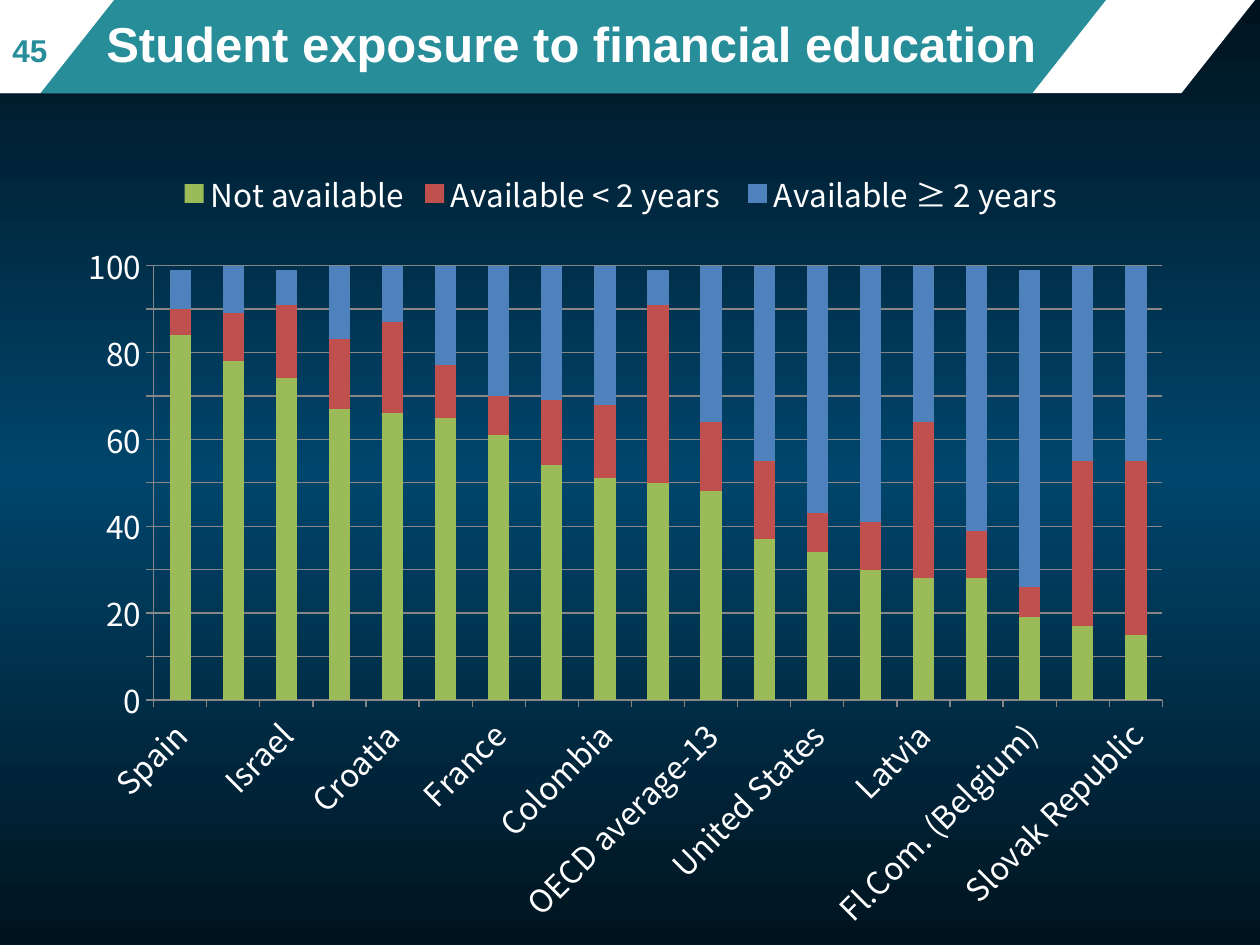
from copy import deepcopy

from lxml import etree
from pptx import Presentation
from pptx import util as u
from pptx.chart.data import CategoryChartData
from pptx.dml.color import RGBColor
from pptx.enum import chart as charts, shapes, text
from pptx.oxml.ns import qn

PX = 914400 / 126
COLORS = {
    "white": "FFFFFF", "teal": "278D99", "night": "00131E", "ocean": "00456C",
    "grid": "868686", "none": "9BBB59", "short": "C0504D", "long": "4F81BD",
}
EXPOSURE = [
    ("Spain", 84, 6, 9), ("Estonia", 78, 11, 11), ("Israel", 74, 17, 8),
    ("Slovenia", 67, 16, 17), ("Croatia", 66, 21, 13), ("Italy", 65, 12, 23),
    ("France", 61, 9, 30), ("Poland", 54, 15, 31), ("Colombia", 51, 17, 32),
    ("Shanghai-China", 50, 41, 8), ("OECD average-13", 48, 16, 36),
    ("Russian Federation", 37, 18, 45), ("United States", 34, 9, 57),
    ("New Zealand", 30, 11, 59), ("Latvia", 28, 36, 36),
    ("Australia", 28, 11, 61), ("Fl.Com. (Belgium)", 19, 7, 73),
    ("Czech Republic", 17, 38, 45), ("Slovak Republic", 15, 40, 45),
]
AVAILABILITY = [("Not available", "none"), ("Available < 2 years ", "short"),
                ("Available ≥ 2 years ", "long")]


def box(*lengths):
    return [u.Emu(round(length * PX)) for length in lengths]


def rgb(name):
    return RGBColor.from_string(COLORS[name])


def style_font(font, face, size, color, bold=False):
    font.name, font.size, font.bold = face, u.Pt(size), bold
    font.color.rgb = rgb(color)


def paint_background(slide):
    fill = slide.background.fill
    fill.gradient()
    fill.gradient_angle = 90
    stops = next(slide.element.iter(qn("a:gsLst")))
    stops.insert(1, deepcopy(stops[0]))
    for stop, position, color in zip(fill.gradient_stops, (0, 0.5, 1),
                                     ("night", "ocean", "night")):
        stop.position = position
        stop.color.rgb = rgb(color)


def add_band(slide, left, width, color):
    band = slide.shapes.add_shape(shapes.MSO_SHAPE.PARALLELOGRAM,
                                  *box(left, 0, width, 93))
    band.adjustments[0] = 0.79
    band.shadow.inherit = False
    band.fill.solid()
    band.fill.fore_color.rgb = rgb(color)
    band.line.fill.background()


def add_label(slide, place, words, size, color, anchor):
    frame = slide.shapes.add_textbox(*box(*place)).text_frame
    frame.word_wrap = True
    frame.vertical_anchor = anchor
    frame.text = words
    style_font(frame.paragraphs[0].runs[0].font, "Arial", size, color, True)


def style_line(line):
    line.color.rgb = rgb("grid")
    line.width = u.Pt(0.75)


def fix_plot_area(chart, **fractions):
    plot_area = chart.plots[0]._element.getparent()
    for old in plot_area.findall(qn("c:layout")):
        plot_area.remove(old)
    layout = etree.Element(qn("c:layout"))
    manual = etree.SubElement(layout, qn("c:manualLayout"))
    settings = {"layoutTarget": "inner", "xMode": "edge", "yMode": "edge", **fractions}
    for tag, value in settings.items():
        etree.SubElement(manual, qn(f"c:{tag}")).set("val", str(value))
    plot_area.insert(0, layout)


def style_axes(chart):
    countries, percent = chart.category_axis, chart.value_axis
    for axis in (countries, percent):
        axis.major_tick_mark = charts.XL_TICK_MARK.OUTSIDE
        axis.minor_tick_mark = charts.XL_TICK_MARK.NONE
        style_line(axis.format.line)
        style_font(axis.tick_labels.font, "Noto Sans CJK KR", 18, "white")
    countries._element.find(qn("c:txPr")).find(qn("a:bodyPr")).set("rot", "-2700000")
    percent.minimum_scale, percent.maximum_scale, percent.major_unit = 0, 100, 10
    percent.tick_labels.number_format = "#,##0"
    percent.tick_labels.number_format_is_linked = False
    percent.has_major_gridlines = True
    style_line(percent.major_gridlines.format.line)


def add_exposure_chart(slide):
    countries, *shares = zip(*EXPOSURE)
    data = CategoryChartData(number_format="0")
    data.categories = countries
    for (name, _), values in zip(AVAILABILITY, shares):
        data.add_series(name, values)
    chart = slide.shapes.add_chart(charts.XL_CHART_TYPE.COLUMN_STACKED,
                                   *box(64, 155, 1121, 790), data).chart
    chart.has_title = False
    style_font(chart.font, "Noto Sans CJK KR", 18, "white")
    chart.has_legend = True
    chart.legend.position = charts.XL_LEGEND_POSITION.TOP
    chart.legend.include_in_layout = False
    style_font(chart.legend.font, "Noto Sans CJK KR", 18, "white")
    columns = chart.plots[0]
    columns.gap_width, columns.overlap = 150, 100
    columns.vary_by_categories = False
    for series, (_, color) in zip(columns.series, AVAILABILITY):
        series.format.fill.solid()
        series.format.fill.fore_color.rgb = rgb(color)
    style_axes(chart)
    fix_plot_area(chart, x=0.08, y=0.14, w=0.9, h=0.55)


def main():
    deck = Presentation()
    deck.slide_width, deck.slide_height = box(1260, 945)
    slide = deck.slides.add_slide(deck.slide_layouts[6])
    paint_background(slide)
    for left, width, color in ((-25, 1280, "white"), (-74, 1180, "teal"),
                               (-73, 187, "white")):
        add_band(slide, left, width, color)
    add_exposure_chart(slide)
    add_label(slide, (94, 0, 1002, 86), "Student exposure to financial education",
              28, "white", text.MSO_ANCHOR.MIDDLE)
    add_label(slide, (0, 25, 74, 50), "45", 18, "teal", text.MSO_ANCHOR.TOP)
    deck.save("out.pptx")


if __name__ == "__main__":
    main()
